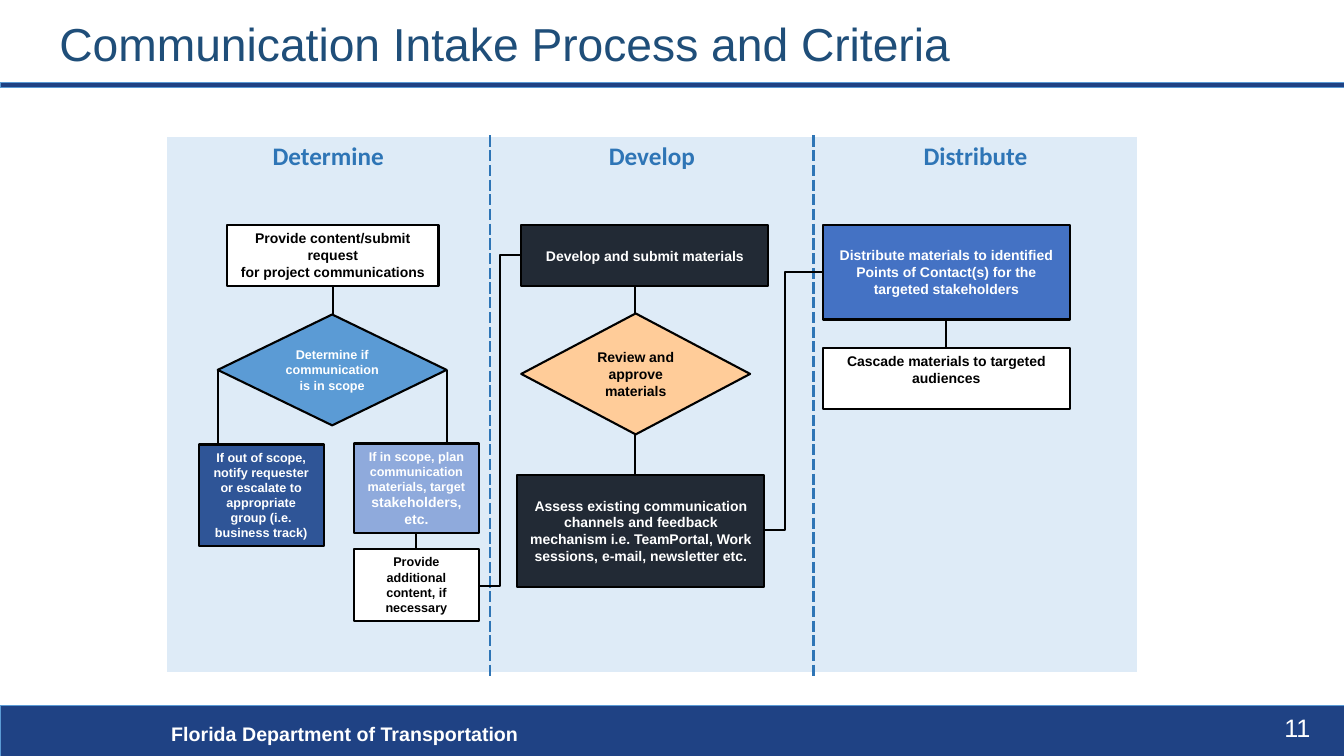
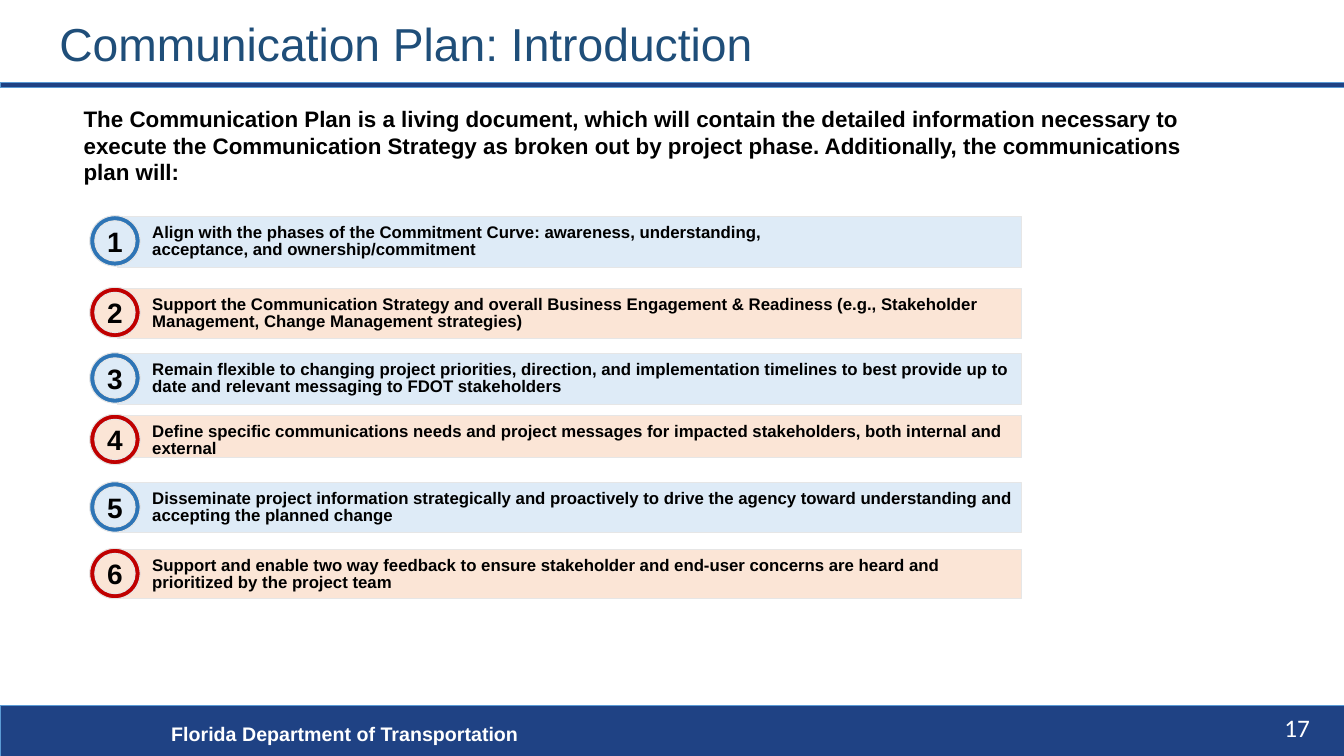
from dataclasses import dataclass
from typing import Optional

from lxml.etree import SubElement
from pptx import Presentation
from pptx.dml.color import RGBColor
from pptx.enum.shapes import MSO_CONNECTOR, MSO_SHAPE
from pptx.enum.text import MSO_ANCHOR, PP_ALIGN
from pptx.oxml import parse_xml
from pptx.oxml.ns import nsdecls, qn
from pptx.util import Inches, Pt

# Shared colours
NAVY, BLUE, TITLE_BLUE = "1F4284", "2E75B6", "1F4E79"
SKY, PALE_BLUE, PALE_ORANGE = "5B9BD5", "DEEBF7", "FBE5D6"
RED, INK, GREY = "C00000", "222A35", "E6E6E6"
BLACK, WHITE = "000000", "FFFFFF"


@dataclass
class Step:
    """One box or diamond of the flowchart."""
    at: tuple[float, float, float, float]
    lines: list
    fill: str = WHITE
    color: str = BLACK
    size: float = 10
    anchor: MSO_ANCHOR = MSO_ANCHOR.TOP
    kind: MSO_SHAPE = MSO_SHAPE.RECTANGLE


@dataclass
class Link:
    """A flowchart line; bend is the share of its width before an elbow."""
    start: tuple[float, float]
    end: tuple[float, float]
    bend: Optional[float] = None


@dataclass
class Goal:
    """One numbered bar of the plan."""
    top: float
    height: float
    text: str
    text_width: float = 8.62


# Helpers
def rgb(value: str) -> RGBColor:
    return RGBColor.from_string(value)


def write(shape, paragraphs, *, size: float, color: str = BLACK, bold: bool = False,
          font: str = "Arial", align=PP_ALIGN.LEFT, anchor=MSO_ANCHOR.TOP,
          spacing: Optional[float] = None, insets=(0.1, 0.05, 0.1, 0.05)) -> None:
    """Fill a shape or cell; a paragraph is a string or a list of (text, size)."""
    tf = shape.text_frame
    tf.word_wrap = True
    tf.vertical_anchor = anchor
    tf.margin_left, tf.margin_top, tf.margin_right, tf.margin_bottom = map(Inches, insets)
    for i, content in enumerate(paragraphs):
        p = tf.add_paragraph() if i else tf.paragraphs[0]
        p.alignment = align
        if spacing:
            p.line_spacing = spacing
        for text, run_size in [(content, size)] if isinstance(content, str) else content:
            r = p.add_run()
            r.text = text
            r.font.name, r.font.size, r.font.bold = font, Pt(run_size), bold
            r.font.color.rgb = rgb(color)


def add_text(s, at, text: str, **fmt) -> None:
    write(s.shapes.add_textbox(*map(Inches, at)), [text], **fmt)


def add_box(s, kind, at, fill: str, line: str, width: float):
    sp = s.shapes.add_shape(kind, *map(Inches, at))
    sp.shadow.inherit = False
    sp.fill.solid()
    sp.fill.fore_color.rgb = rgb(fill)
    sp.line.color.rgb = rgb(line)
    sp.line.width = Pt(width)
    return sp


def add_link(s, link: Link) -> None:
    kind = MSO_CONNECTOR.STRAIGHT if link.bend is None else MSO_CONNECTOR.ELBOW
    cx = s.shapes.add_connector(kind, *map(Inches, link.start + link.end))
    cx.line.color.rgb = rgb(BLACK)
    cx.line.width = Pt(1.5)
    sp_pr = cx._element.spPr
    SubElement(sp_pr, qn("a:effectLst"))
    if link.bend is not None:
        geom = sp_pr.find(qn("a:prstGeom"))
        guides = geom.find(qn("a:avLst"))
        if guides is None:
            guides = SubElement(geom, qn("a:avLst"))
        SubElement(guides, qn("a:gd"), name="adj1", fmla=f"val {round(link.bend * 100000)}")


def set_borders(cell, **sides) -> None:
    """Each side (L, R, T, B) takes (colour, points, dash)."""
    tc_pr = cell._tc.get_or_add_tcPr()
    for i, side in enumerate("LRTB"):
        color, width, dash = sides[side]
        tc_pr.insert(i, parse_xml(
            f'<a:ln{side} {nsdecls("a")} w="{Pt(width)}"><a:solidFill>'
            f'<a:srgbClr val="{color}"/></a:solidFill><a:prstDash val="{dash}"/></a:ln{side}>'))


def new_slide(prs, title: str, number: str, number_font: str = "Arial"):
    """Blank slide with title, rule, footer band and page number."""
    s = prs.slides.add_slide(prs.slide_layouts[6])
    for at in ((0, 7, 13.33, 0.5), (0, 0.82, 13.33, 0.05)):
        add_box(s, MSO_SHAPE.RECTANGLE, at, NAVY, SKY, 0.5)
    add_text(s, (1.6, 7.11, 7.98, 0.34), "Florida Department of Transportation",
             size=14, color=WHITE, bold=True)
    add_text(s, (0.49, 0.1, 11.5, 0.72), title, size=33, color=TITLE_BLUE,
             anchor=MSO_ANCHOR.MIDDLE, spacing=0.9)
    add_text(s, (12.64, 7.02, 0.56, 0.4), number, size=18, color=WHITE, font=number_font)
    return s


# Slide content
PHASES = ["Determine", "Develop", "Distribute"]
MIDDLE, DIAMOND = MSO_ANCHOR.MIDDLE, MSO_SHAPE.FLOWCHART_DECISION
STEPS = [
    Step((2.25, 2.23, 2.1, 0.61),
         ["Provide content/submit request", "for project communications"]),
    Step((2.16, 3.12, 2.27, 1.1), ["Determine if communication is in scope"],
         SKY, WHITE, 9, kind=DIAMOND),
    Step((3.51, 4.4, 1.24, 0.89),
         [[("If in scope, plan communication materials, target ", 9),
           ("stakeholders, etc.", 10)]], "8FAADC", WHITE),
    Step((1.97, 4.41, 1.24, 1.01),
         ["If out of scope, notify requester or escalate to appropriate group "
          "(i.e. business track)"], "2F5597", WHITE, 9),
    Step((3.51, 5.45, 1.24, 0.71), ["Provide additional content, if necessary"], size=9),
    Step((5.17, 2.23, 2.45, 0.61), ["Develop and submit materials"],
         INK, WHITE, anchor=MIDDLE),
    Step((5.17, 3.11, 2.27, 1.2), ["Review and approve materials"], "FFCC99", kind=DIAMOND),
    Step((5.13, 4.71, 2.45, 1.11),
         ["Assess existing communication channels and feedback mechanism i.e. TeamPortal, "
          "Work sessions, e-mail, newsletter etc."], INK, WHITE, anchor=MIDDLE),
    Step((8.16, 2.23, 2.45, 0.94),
         ["Distribute materials to identified Points of Contact(s) for the targeted "
          "stakeholders"], "4472C4", WHITE, anchor=MIDDLE),
    Step((8.16, 3.45, 2.45, 0.61), ["Cascade materials to targeted audiences"]),
]
LINKS = [
    Link((3.3, 2.84), (3.3, 3.12)),
    Link((4.43, 3.67), (4.43, 4.4)),
    Link((2.16, 3.67), (2.16, 4.41)),
    Link((4.13, 5.29), (4.13, 5.45)),
    Link((6.3, 2.84), (6.3, 3.11)),
    Link((6.3, 4.31), (6.3, 4.71)),
    Link((9.38, 3.17), (9.38, 3.45)),
    Link((4.75, 5.81), (5.17, 2.53), 0.5),
    Link((7.58, 5.26), (8.16, 2.7), 0.36),
]
GOALS = [
    Goal(2.15, 0.5, "Align with the phases of the Commitment Curve: awareness, understanding, "
         "acceptance, and ownership/commitment", 6.77),
    Goal(2.86, 0.5, "Support the Communication Strategy and overall Business Engagement & "
         "Readiness (e.g., Stakeholder Management, Change Management strategies)"),
    Goal(3.51, 0.5, "Remain flexible to changing project priorities, direction, and "
         "implementation timelines to best provide up to date and relevant messaging to "
         "FDOT stakeholders"),
    Goal(4.12, 0.42, "Define specific communications needs and project messages for impacted "
         "stakeholders, both internal and external"),
    Goal(4.79, 0.49, "Disseminate project information strategically and proactively to drive "
         "the agency toward understanding and accepting the planned change"),
    Goal(5.45, 0.49, "Support and enable two way feedback to ensure stakeholder and end-user "
         "concerns are heard and prioritized by the project team"),
]


def add_phases(s) -> None:
    """Three-column table with dashed dividers behind the flowchart."""
    table = s.shapes.add_table(1, len(PHASES), *map(Inches, (1.65, 1.35, 9.63, 5.34))).table
    table.first_row = table.horz_banding = False
    divider, edge = (BLUE, 2.25, "sysDash"), (WHITE, 1, "solid")
    last = len(PHASES) - 1
    for i, phase in enumerate(PHASES):
        cell = table.cell(0, i)
        cell.fill.solid()
        cell.fill.fore_color.rgb = rgb(PALE_BLUE)
        p = cell.text_frame.paragraphs[0]
        p.alignment = PP_ALIGN.CENTER
        r = p.add_run()
        r.text = phase
        r.font.name, r.font.size, r.font.bold = "Calibri", Pt(18), True
        r.font.color.rgb = rgb(BLUE)
        set_borders(cell, L=divider if i else edge, R=divider if i < last else edge,
                    T=edge, B=(WHITE, 3, "solid"))


def add_goal(s, number: int, goal: Goal) -> None:
    accent, pale = (BLUE, PALE_BLUE) if number % 2 else (RED, PALE_ORANGE)
    top = goal.top
    add_box(s, MSO_SHAPE.RECTANGLE, (1.17, top, 8.96, goal.height), pale, GREY, 0.75)
    add_box(s, MSO_SHAPE.OVAL, (0.89, top - 0.01, 0.5, 0.5), accent, GREY, 0.75)
    badge = add_box(s, MSO_SHAPE.OVAL, (0.94, top + 0.04, 0.4, 0.4), pale, GREY, 0.75)
    write(badge, [str(number)], size=20, bold=True, align=PP_ALIGN.CENTER,
          anchor=MIDDLE, insets=(0, 0, 0, 0))
    add_text(s, (1.51, top + 0.04, goal.text_width, 0.38), goal.text, size=12, bold=True,
             spacing=0.85, insets=(0, 0.04, 0, 0))


def main() -> None:
    prs = Presentation()
    prs.slide_width, prs.slide_height = Inches(13.33), Inches(7.5)

    # Intake process flowchart
    s = new_slide(prs, "Communication Intake Process and Criteria", "11")
    add_phases(s)
    for link in LINKS:
        add_link(s, link)
    for step in STEPS:
        sp = add_box(s, step.kind, step.at, step.fill, BLACK, 1.5)
        write(sp, step.lines, size=step.size, color=step.color, bold=True,
              align=PP_ALIGN.CENTER, anchor=step.anchor)

    # Numbered goals of the plan
    s = new_slide(prs, "Communication Plan: Introduction", "17", "Calibri")
    add_text(s, (0.83, 1.04, 11.16, 0.85),
             "The Communication Plan is a living document, which will contain the detailed "
             "information necessary to execute the Communication Strategy as broken out by "
             "project phase. Additionally, the communications plan will:",
             size=16, bold=True, insets=(0, 0, 0, 0))
    for number, goal in enumerate(GOALS, 1):
        add_goal(s, number, goal)

    prs.save("out.pptx")


if __name__ == "__main__":
    main()
